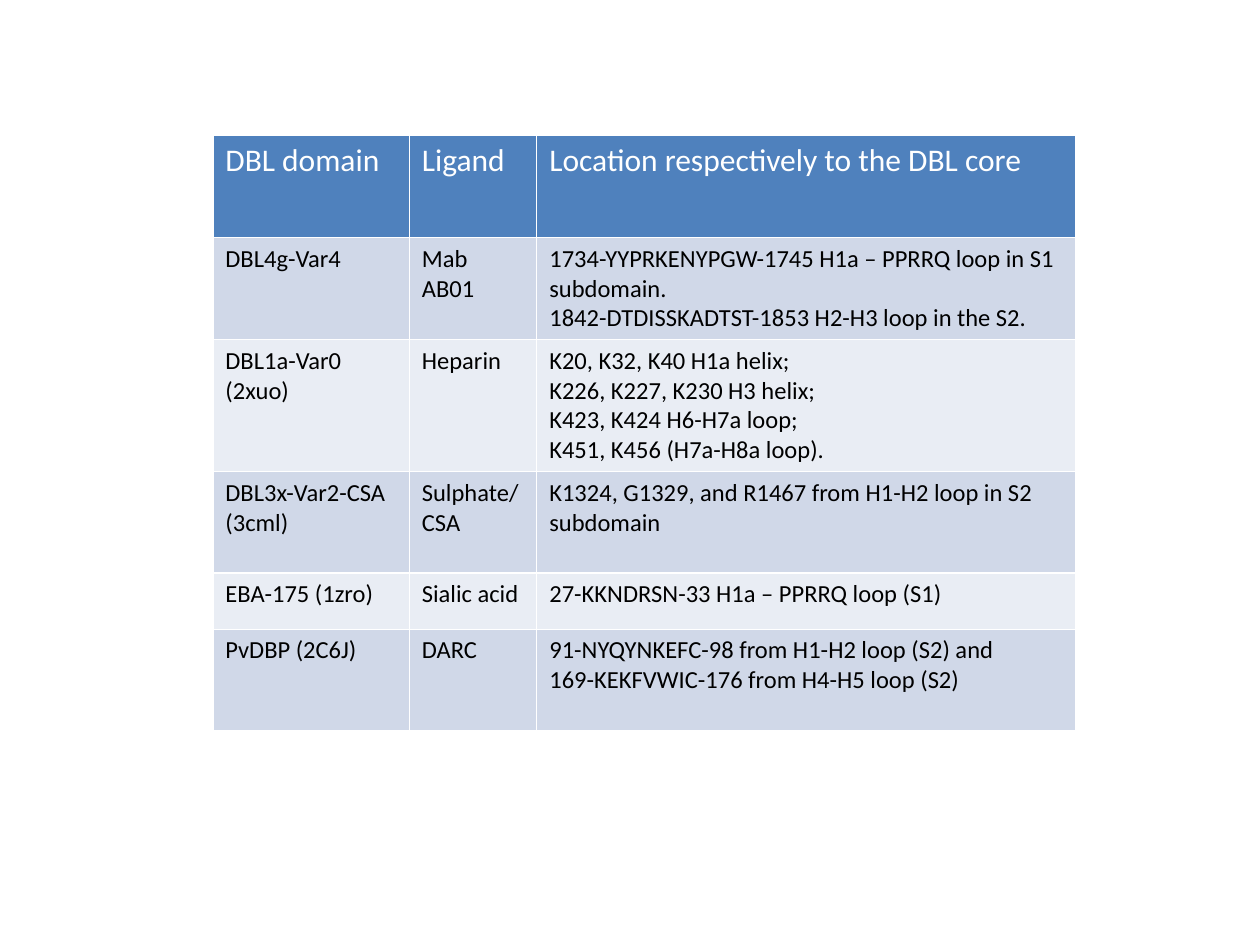
from dataclasses import dataclass

from pptx import Presentation
from pptx import util as u
from pptx.dml.color import RGBColor

COLORS = {
    "header": "4F81BD",
    "odd_row": "D0D8E8",
    "even_row": "E9EDF4",
    "header_text": "FFFFFF",
    "body_text": "000000",
}
FONT = "Calibri"
COLUMN_WIDTHS = (3.96, 2.57, 10.87)


@dataclass
class DomainRow:
    height: float
    domain: str
    ligand: str
    location: str


ROWS = [
    DomainRow(2.07, "DBL domain", "Ligand", "Location respectively to the DBL core"),
    DomainRow(2.04, "DBL4g-Var4", "Mab AB01",
              "1734-YYPRKENYPGW-1745 H1a – PPRRQ loop in S1 subdomain.\n"
              "1842-DTDISSKADTST-1853 H2-H3 loop in the S2."),
    DomainRow(2.64, "DBL1a-Var0 (2xuo)", "Heparin",
              "K20, K32, K40 H1a helix;\n"
              "K226, K227, K230 H3 helix;\n"
              "K423, K424 H6-H7a loop;\n"
              "K451, K456 (H7a-H8a loop)."),
    DomainRow(2.04, "DBL3x-Var2-CSA (3cml)", "Sulphate/CSA",
              "K1324, G1329, and R1467 from H1-H2 loop in S2 subdomain"),
    DomainRow(1.14, "EBA-175 (1zro)", "Sialic acid",
              "27-KKNDRSN-33 H1a – PPRRQ loop (S1)"),
    DomainRow(2.04, "PvDBP (2C6J)", "DARC",
              "91-NYQYNKEFC-98 from H1-H2 loop (S2) and\n"
              "169-KEKFVWIC-176 from H4-H5 loop (S2)"),
]


def fill_cell(cell, content: str, fill: str, text_color: str, size: int) -> None:
    cell.fill.solid()
    cell.fill.fore_color.rgb = RGBColor.from_string(COLORS[fill])
    cell.text_frame.text = content
    for paragraph in cell.text_frame.paragraphs:
        for run in paragraph.runs:
            run.font.name = FONT
            run.font.size = u.Pt(size)
            run.font.bold = False
            run.font.color.rgb = RGBColor.from_string(COLORS[text_color])


def add_domain_table(slide, rows: list[DomainRow]) -> None:
    table = slide.shapes.add_table(
        len(rows), len(COLUMN_WIDTHS), u.Cm(4.29), u.Cm(2.72),
        u.Cm(sum(COLUMN_WIDTHS)), u.Cm(sum(row.height for row in rows)),
    ).table
    for column, width in zip(table.columns, COLUMN_WIDTHS):
        column.width = u.Cm(width)
    for index, row in enumerate(rows):
        table.rows[index].height = u.Cm(row.height)
        if index == 0:
            style = ("header", "header_text", 18)
        else:
            style = ("odd_row" if index % 2 else "even_row", "body_text", 14)
        contents = (row.domain, row.ligand, row.location)
        for cell, content in zip(table.rows[index].cells, contents):
            fill_cell(cell, content, *style)


def main() -> None:
    presentation = Presentation()
    presentation.slide_width = u.Cm(25.4)
    presentation.slide_height = u.Cm(19.05)
    slide = presentation.slides.add_slide(presentation.slide_layouts[6])
    add_domain_table(slide, ROWS)
    presentation.save("out.pptx")


if __name__ == "__main__":
    main()
